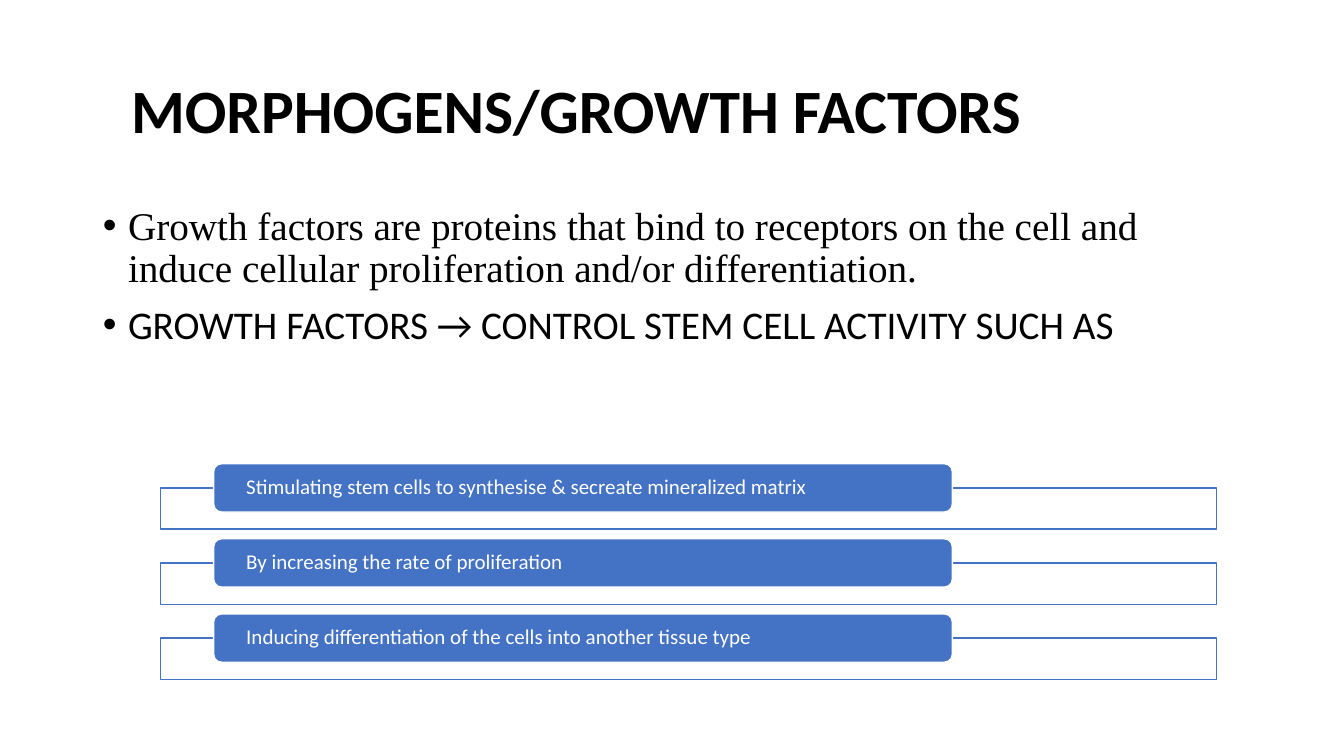
from dataclasses import dataclass

from lxml.etree import SubElement
from pptx import Presentation
from pptx.dml.color import RGBColor
from pptx.enum.shapes import MSO_SHAPE
from pptx.enum.text import MSO_ANCHOR, MSO_AUTO_SIZE, PP_ALIGN
from pptx.oxml.ns import qn
from pptx.util import Pt

PIXEL = 914400 // 200


@dataclass(frozen=True)
class Theme:
    black: RGBColor = RGBColor(0x00, 0x00, 0x00)
    white: RGBColor = RGBColor(0xFF, 0xFF, 0xFF)
    blue: RGBColor = RGBColor(0x44, 0x72, 0xC4)
    sans: str = "Calibri"
    serif: str = "Times New Roman"
    title_size: int = 44
    body_size: int = 28
    bar_size: int = 15
    line_width: int = 1


def apply_format(target, values):
    for name, value in values.items():
        setattr(target, name, value)


class SlideBuilder:
    def __init__(self, slide, theme):
        self.slide = slide
        self.theme = theme

    def place(self, shape, left, top, width, height):
        apply_format(shape, {
            "left": left * PIXEL, "top": top * PIXEL,
            "width": width * PIXEL, "height": height * PIXEL,
        })

    def add_text(self, paragraph, text, font, size, color, bold=False, **spacing):
        run = paragraph.add_run()
        run.text = text
        apply_format(run.font, {"name": font, "size": Pt(size), "bold": bold})
        run.font.color.rgb = color
        apply_format(paragraph, {"alignment": PP_ALIGN.LEFT, "line_spacing": 0.9, **spacing})

    def title(self, text, bounds, indent):
        shape = self.slide.shapes.title
        self.place(shape, *bounds)
        apply_format(shape.text_frame, {
            "vertical_anchor": MSO_ANCHOR.MIDDLE,
            "auto_size": MSO_AUTO_SIZE.NONE,
            "margin_left": indent * PIXEL,
        })
        self.add_text(shape.text_frame.paragraphs[0], text, self.theme.sans,
                      self.theme.title_size, self.theme.black, bold=True)

    def bullets(self, items, bounds, indent):
        shape = self.slide.placeholders[1]
        self.place(shape, *bounds)
        frame = shape.text_frame
        frame.auto_size = MSO_AUTO_SIZE.NONE
        for index, (text, font) in enumerate(items):
            paragraph = frame.add_paragraph() if index else frame.paragraphs[0]
            self.add_text(paragraph, text, font, self.theme.body_size,
                          self.theme.black, space_before=Pt(10))
            properties = paragraph._p.get_or_add_pPr()
            properties.set("marL", str(indent * PIXEL))
            properties.set("indent", str(-indent * PIXEL))
            SubElement(properties, qn("a:buFont"), typeface="Arial")
            SubElement(properties, qn("a:buChar"), char="•")

    def box(self, kind, bounds, fill, line):
        shape = self.slide.shapes.add_shape(kind, *(value * PIXEL for value in bounds))
        shape.shadow.inherit = False
        shape.fill.solid()
        shape.fill.fore_color.rgb = fill
        shape.line.color.rgb = line
        shape.line.width = Pt(self.theme.line_width)
        return shape

    def frame(self, bounds):
        shape = self.box(MSO_SHAPE.RECTANGLE, bounds, self.theme.white, self.theme.blue)
        color = shape.element.spPr.find(qn("a:solidFill"))[0]
        SubElement(color, qn("a:alpha"), val="90000")

    def bar(self, text, bounds, inset):
        shape = self.box(MSO_SHAPE.ROUNDED_RECTANGLE, bounds, self.theme.blue, self.theme.white)
        apply_format(shape.text_frame, {
            "word_wrap": True, "vertical_anchor": MSO_ANCHOR.MIDDLE,
            "margin_left": inset * PIXEL, "margin_right": inset * PIXEL,
            "margin_top": 0, "margin_bottom": 0,
        })
        self.add_text(shape.text_frame.paragraphs[0], text, self.theme.sans,
                      self.theme.bar_size, self.theme.white)


def main():
    presentation = Presentation()
    presentation.slide_width = 2667 * PIXEL
    presentation.slide_height = 1500 * PIXEL
    theme = Theme()
    slide = presentation.slides.add_slide(presentation.slide_layouts[1])
    builder = SlideBuilder(slide, theme)

    builder.title("MORPHOGENS/GROWTH FACTORS", (184, 80, 2300, 290), indent=76)
    builder.bullets([
        ("Growth factors are proteins that bind to receptors on the cell and "
         "induce cellular proliferation and/or differentiation.", theme.serif),
        ("GROWTH FACTORS → CONTROL STEM CELL ACTIVITY SUCH AS", theme.sans),
    ], (184, 400, 2300, 952), indent=50)

    activities = [
        "Stimulating stem cells to synthesise & secreate mineralized matrix",
        "By increasing the rate of proliferation",
        "Inducing differentiation of the cells into another tissue type",
    ]
    first_top, pitch = 920, 149
    for index, activity in enumerate(activities):
        top = first_top + index * pitch
        builder.frame((318, top + 48, 2096, 82))
        builder.bar(activity, (424, top, 1466, 96), inset=60)

    presentation.save("out.pptx")


if __name__ == "__main__":
    main()
